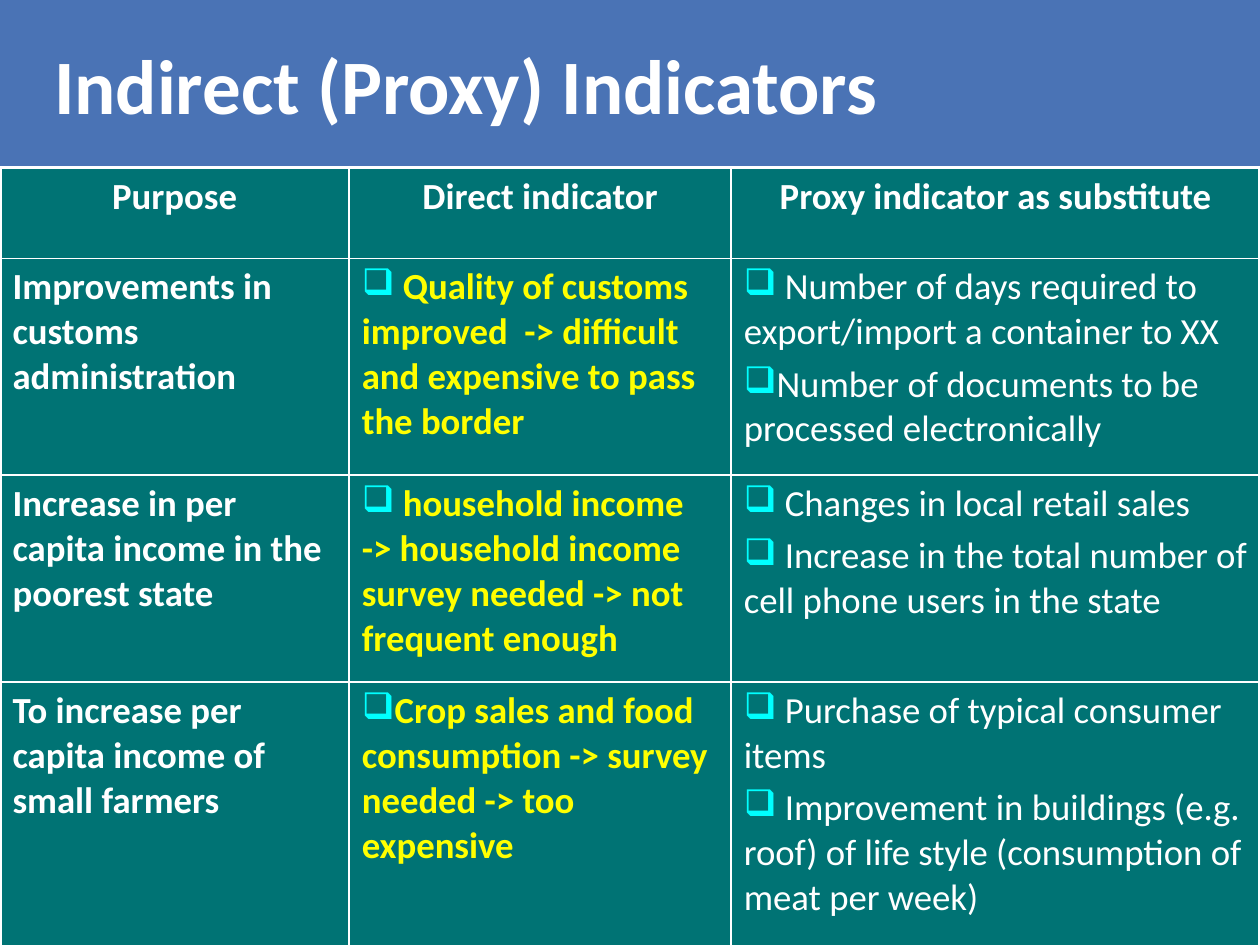
from dataclasses import dataclass

import pptx
import pptx.dml.color
import pptx.enum.shapes
import pptx.enum.text
import pptx.oxml.ns
import pptx.util
from lxml import etree

Cm = pptx.util.Cm
Pt = pptx.util.Pt
RGBColor = pptx.dml.color.RGBColor
Align = pptx.enum.text.PP_ALIGN

NAVY = RGBColor(0x30, 0x41, 0x7E)
BLUE = RGBColor(0x4A, 0x73, 0xB5)
TEAL = RGBColor(0x00, 0x73, 0x74)
WHITE = RGBColor(0xFF, 0xFF, 0xFF)
YELLOW = RGBColor(0xFF, 0xFF, 0x00)
CYAN = RGBColor(0x00, 0xFF, 0xFF)

FONT = "Calibri"
BODY_SIZE = 21
WIDTH, HEIGHT = Cm(25.4), Cm(19.05)
BANNER_HEIGHT = Cm(3.38)
COLUMN_WIDTHS = (Cm(7.04), Cm(7.7), Cm(10.66))
ROW_HEIGHTS = (Cm(1.83), Cm(4.37), Cm(4.17), Cm(5.33))
INNER_LINE, OUTER_LINE = Pt(1), Pt(2.25)


@dataclass
class Indicator:
    purpose: str
    direct: str
    proxies: tuple[str, ...]


HEADINGS = ("Purpose", "Direct indicator", "Proxy indicator as substitute")
INDICATORS = (
    Indicator(
        "Improvements in customs administration",
        " Quality of customs improved  -> difficult and expensive to pass the border",
        (" Number of days required to export/import a container to XX",
         "Number of documents to be processed electronically"),
    ),
    Indicator(
        "Increase in per capita income in the poorest state",
        " household income -> household income survey needed -> not frequent enough",
        (" Changes in local retail sales",
         " Increase in the total number of cell phone users in the state"),
    ),
    Indicator(
        "To increase per capita income of small farmers",
        "Crop sales and food consumption -> survey needed -> too expensive",
        (" Purchase of typical consumer items",
         " Improvement in buildings (e.g. roof) of life style "
         "(consumption of meat per week)"),
    ),
)


def add_element(parent, tag: str, **attributes: str):
    return etree.SubElement(parent, pptx.oxml.ns.qn(tag), **attributes)


def add_bullet(para) -> None:
    properties = para._p.get_or_add_pPr()
    properties.set("marL", "0")
    properties.set("indent", "0")
    color = add_element(properties, "a:buClr")
    add_element(color, "a:srgbClr", val=str(CYAN))
    add_element(properties, "a:buChar", char="❑")


def write(frame, *texts: str, size: float = BODY_SIZE, color: RGBColor = WHITE,
          bold: bool = True, align=Align.LEFT, bullet: bool = False) -> None:
    """Put each text in a paragraph of its own."""
    frame.word_wrap = True
    for index, text in enumerate(texts):
        para = frame.add_paragraph() if index else frame.paragraphs[0]
        para.alignment = align
        if index:
            para.space_before = Pt(0.2 * size)
        if bullet:
            add_bullet(para)
        span = para.add_run()
        span.text = text
        span.font.name = FONT
        span.font.size = Pt(size)
        span.font.bold = bold
        span.font.color.rgb = color


def style_cell(cell, row: int, column: int) -> None:
    """Fill the cell and draw its borders, heavier on the table's outer edge."""
    outer_sides = {
        "a:lnL": column == 0,
        "a:lnR": column == len(COLUMN_WIDTHS) - 1,
        "a:lnT": row == 0,
        "a:lnB": row == len(ROW_HEIGHTS) - 1,
    }
    properties = cell._tc.get_or_add_tcPr()
    for side, is_outer in outer_sides.items():
        line_width = OUTER_LINE if is_outer else INNER_LINE
        line = add_element(properties, side, w=str(int(line_width)))
        fill = add_element(line, "a:solidFill")
        add_element(fill, "a:srgbClr", val=str(WHITE))
    cell.fill.solid()
    cell.fill.fore_color.rgb = TEAL


def add_banner(page) -> None:
    banner = page.shapes.add_shape(
        pptx.enum.shapes.MSO_SHAPE.RECTANGLE, 0, 0, WIDTH, BANNER_HEIGHT)
    banner.shadow.inherit = False
    banner.fill.solid()
    banner.fill.fore_color.rgb = BLUE
    banner.line.fill.background()
    box = page.shapes.add_textbox(Cm(0.84), Cm(0.64), Cm(21.59), Cm(1.7))
    write(box.text_frame, "Indirect (Proxy) Indicators", size=44)


def add_indicator_table(page) -> None:
    table = page.shapes.add_table(
        len(ROW_HEIGHTS), len(COLUMN_WIDTHS),
        0, BANNER_HEIGHT, WIDTH, sum(ROW_HEIGHTS)).table
    table.first_row = False
    table.horz_banding = False
    for column, width in zip(table.columns, COLUMN_WIDTHS):
        column.width = width
    for row, height in zip(table.rows, ROW_HEIGHTS):
        row.height = height
    for row in range(len(ROW_HEIGHTS)):
        for column in range(len(COLUMN_WIDTHS)):
            style_cell(table.cell(row, column), row, column)

    for column, heading in enumerate(HEADINGS):
        write(table.cell(0, column).text_frame, heading, align=Align.CENTER)
    for row, indicator in enumerate(INDICATORS, start=1):
        purpose, direct, proxy = (cell.text_frame for cell in table.rows[row].cells)
        write(purpose, indicator.purpose)
        write(direct, indicator.direct, color=YELLOW, bullet=True)
        write(proxy, *indicator.proxies, bold=False, bullet=True)


def main() -> None:
    deck = pptx.Presentation()
    deck.slide_width, deck.slide_height = WIDTH, HEIGHT
    page = deck.slides.add_slide(deck.slide_layouts[6])
    page.background.fill.solid()
    page.background.fill.fore_color.rgb = NAVY
    add_banner(page)
    add_indicator_table(page)
    deck.save("out.pptx")


if __name__ == "__main__":
    main()
